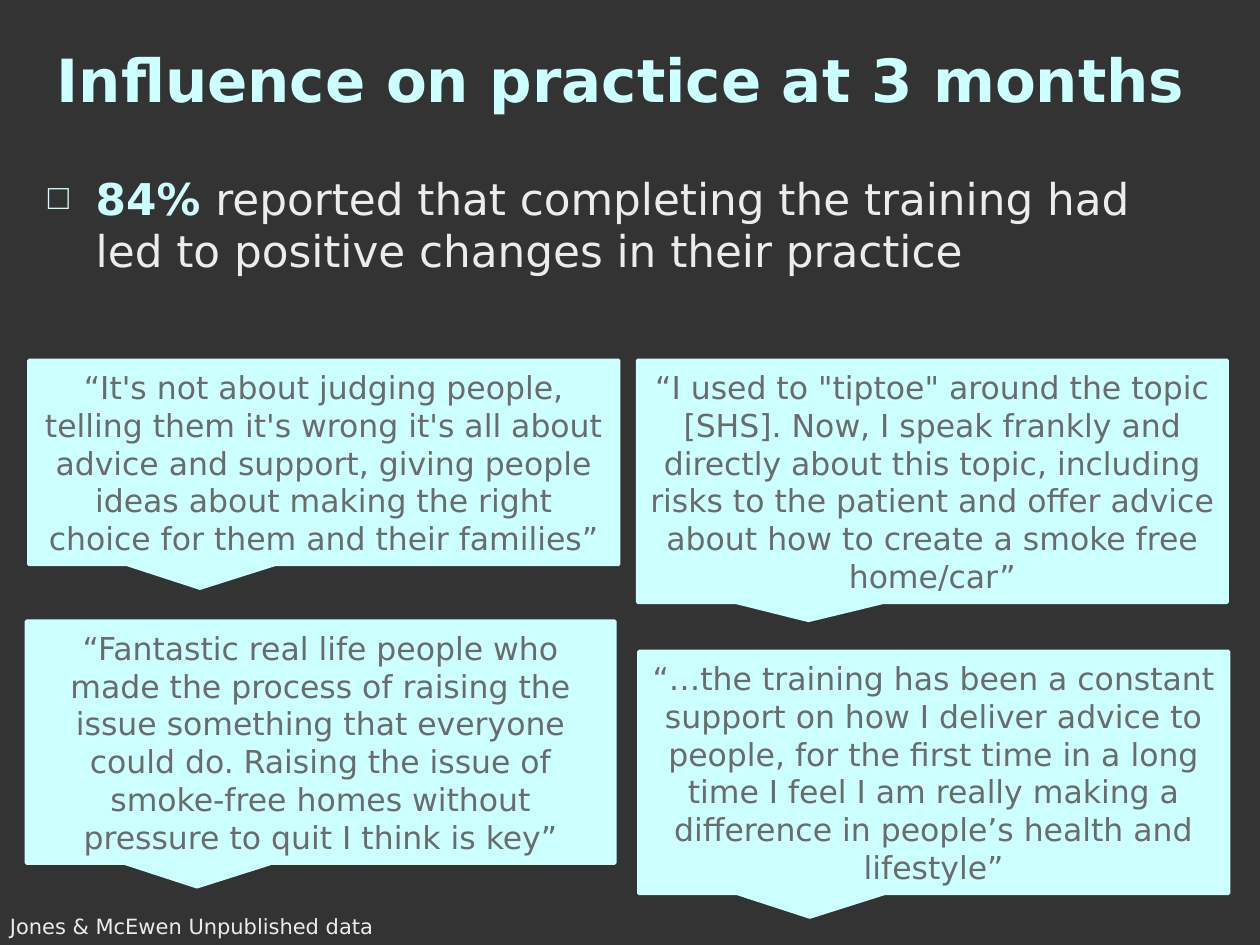
from lxml import etree
from pptx import Presentation
from pptx.dml.color import RGBColor
from pptx.enum.shapes import MSO_SHAPE
from pptx.enum.text import MSO_ANCHOR, MSO_AUTO_SIZE, PP_ALIGN
from pptx.oxml.ns import qn
from pptx.util import Inches, Pt

CALLOUT = MSO_SHAPE.RECTANGULAR_CALLOUT
MIDDLE, TOP = MSO_ANCHOR.MIDDLE, MSO_ANCHOR.TOP
LEFT, CENTER = PP_ALIGN.LEFT, PP_ALIGN.CENTER
FIXED = MSO_AUTO_SIZE.NONE

FONT = "DejaVu Sans"
COLORS = {"background": "333333", "accent": "CCFFFF", "body": "ECECEC", "quote": "6B6B6B"}

# left, top, width, height, vertical offset of the pointer tip, wording
QUOTES = [
    (0.23, 2.86, 4.68, 1.62, 0.616,
     "“It's not about judging people, telling them it's wrong it's all about advice "
     "and support, giving people ideas about making the right choice for them and "
     "their families”"),
    (5.06, 2.86, 4.68, 1.92, 0.575,
     "“I used to \"tiptoe\" around the topic [SHS]. Now, I speak frankly and directly "
     "about this topic, including risks to the patient and offer advice about how to "
     "create a smoke free home/car”"),
    (5.07, 5.17, 4.68, 1.92, 0.598,
     "“…the training has been a constant support on how I deliver advice to people, "
     "for the first time in a long time I feel I am really making a difference in "
     "people’s health and lifestyle”"),
    (0.21, 4.93, 4.67, 1.92, 0.598,
     "“Fantastic real life people who made the process of raising the issue something "
     "that everyone could do. Raising the issue of smoke-free homes without pressure "
     "to quit I think is key”"),
]


def rgb(name):
    return RGBColor.from_string(COLORS[name])


def place(sp, left, top, width, height):
    box = {"left": left, "top": top, "width": width, "height": height}
    for name, value in box.items():
        setattr(sp, name, Inches(value))


def set_frame(tf, anchor=TOP, wrap=True):
    for name, value in {"auto_size": FIXED, "word_wrap": wrap,
                        "vertical_anchor": anchor}.items():
        setattr(tf, name, value)


def add_run(p, text, size, color, bold=False):
    r = p.add_run()
    r.text = text
    for name, value in {"name": FONT, "size": Pt(size), "bold": bold}.items():
        setattr(r.font, name, value)
    r.font.color.rgb = rgb(color)


def add_bullet(p, char, color, percent, indent):
    pPr = p._p.get_or_add_pPr()
    pPr.set("marL", str(Inches(indent)))
    pPr.set("indent", str(-Inches(indent)))
    bu_color = etree.SubElement(pPr, qn("a:buClr"))
    etree.SubElement(bu_color, qn("a:srgbClr"), val=COLORS[color])
    etree.SubElement(pPr, qn("a:buSzPct"), val=str(percent * 1000))
    etree.SubElement(pPr, qn("a:buChar"), char=char)


def fill_title(sp):
    place(sp, 0.35, 0, 9.29, 1.25)
    set_frame(sp.text_frame, MIDDLE)
    p = sp.text_frame.paragraphs[0]
    p.alignment = LEFT
    add_run(p, "Influence on practice at 3 months", 34, "accent", True)


def fill_body(sp):
    place(sp, 0.28, 1.31, 9.05, 1.02)
    set_frame(sp.text_frame)
    p = sp.text_frame.paragraphs[0]
    add_bullet(p, "□", "accent", 80, 0.38)
    p.space_before = Pt(0)
    add_run(p, "84% ", 25, "accent", True)
    add_run(p, "reported that completing the training had led to positive changes "
               "in their practice", 25, "body")


def add_quote(s, left, top, width, height, tip, text):
    sp = s.shapes.add_shape(CALLOUT, *map(Inches, (left, top, width, height)))
    sp.adjustments[0], sp.adjustments[1] = -0.21, tip
    sp.shadow.inherit = False
    sp.fill.solid()
    sp.fill.fore_color.rgb = rgb("accent")
    sp.line.color.rgb = rgb("accent")
    sp.line.width = Pt(2)
    set_frame(sp.text_frame, MIDDLE)
    p = sp.text_frame.paragraphs[0]
    p.alignment = CENTER
    add_run(p, text, 18, "quote")


def add_source(s):
    sp = s.shapes.add_textbox(*map(Inches, (-0.02, 7.2, 3.19, 0.3)))
    set_frame(sp.text_frame, wrap=False)
    add_run(sp.text_frame.paragraphs[0], "Jones & McEwen Unpublished data", 12, "body")


def main():
    prs = Presentation()
    prs.slide_width, prs.slide_height = Inches(10), Inches(7.5)
    s = prs.slides.add_slide(prs.slide_layouts[1])
    s.background.fill.solid()
    s.background.fill.fore_color.rgb = rgb("background")
    fill_title(s.shapes.title)
    fill_body(s.placeholders[1])
    for quote in QUOTES:
        add_quote(s, *quote)
    add_source(s)
    prs.save("out.pptx")


if __name__ == "__main__":
    main()
